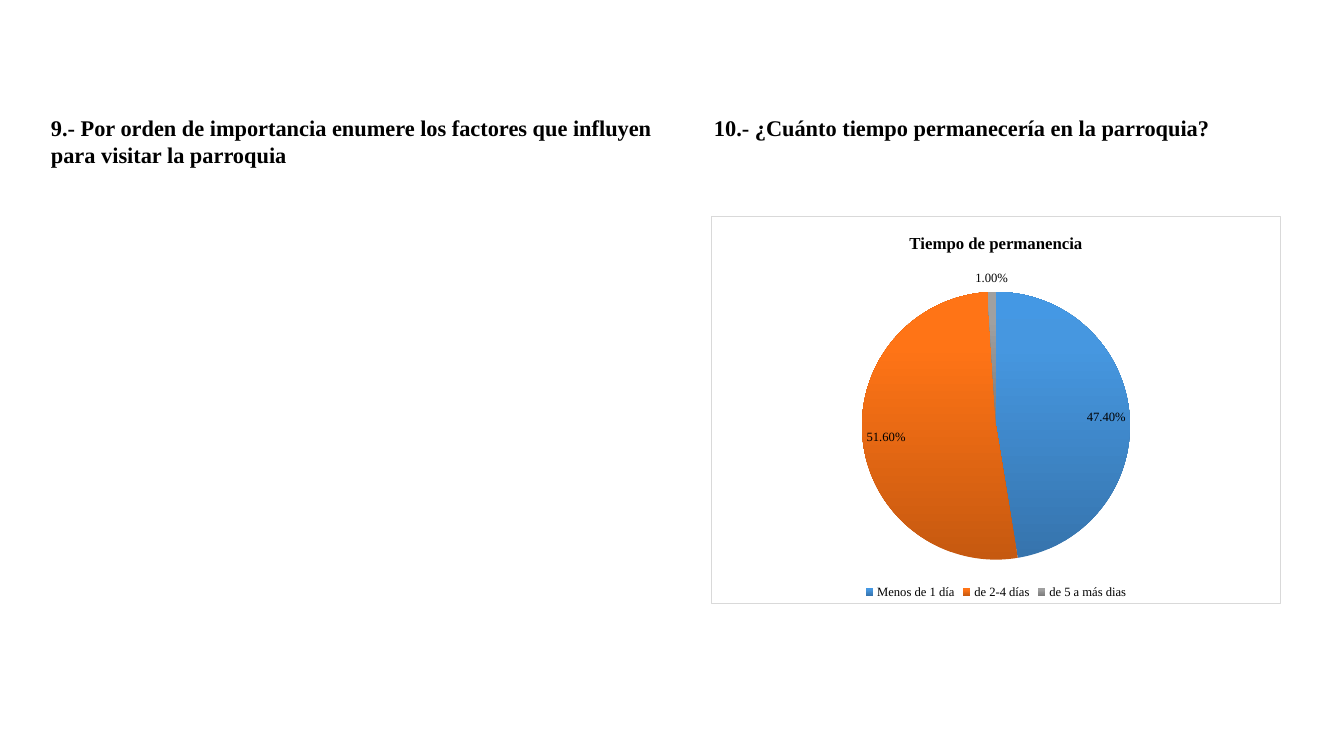
"""Build a slide with two survey questions and a pie chart of length of stay."""
from copy import deepcopy

from lxml.etree import fromstring
from pptx import Presentation
from pptx.chart.data import CategoryChartData
from pptx.dml.color import RGBColor
from pptx.enum.chart import XL_CHART_TYPE, XL_LABEL_POSITION, XL_LEGEND_POSITION
from pptx.oxml.ns import nsdecls, qn
from pptx.util import Pt

SCALE = 914400 / 100.8
SLIDE_SIZE = (1344, 756)
FONT = "Times New Roman"
BLACK = RGBColor(0x00, 0x00, 0x00)
WHITE = RGBColor(0xFF, 0xFF, 0xFF)
BORDER = RGBColor(0xD9, 0xD9, 0xD9)

QUESTIONS = [
    ("9.- Por orden de importancia enumere los factores que influyen para visitar la parroquia",
     (41, 109, 627, 65), True),
    ("10.- ¿Cuánto tiempo permanecería en la parroquia?", (704, 109, 528, 37), False),
]
CHART_TITLE = "Tiempo de permanencia"
CHART_BOX = (711, 216, 570, 388)
STAYS = [
    ("Menos de 1 día", 0.474, ("3674AD", "4697E0", "4498E4")),
    ("de 2-4 días", 0.516, ("C65910", "FF7416", "FF7517")),
    ("de 5 a más dias", 0.01, ("7B7B7B", "A0A0A0", "A1A1A1")),
]
STOP_POSITIONS = (0, 0.8, 1)


def px(*lengths):
    return [round(length * SCALE) for length in lengths]


def format_font(font, size, bold=False):
    font.name = FONT
    font.size = Pt(size)
    font.bold = bold
    font.color.rgb = BLACK


def write_text(frame, text, size=16, bold=True):
    para = frame.paragraphs[0]
    span = para.add_run()
    span.text = text
    format_font(span.font, size, bold)


def add_question(page, text, place, wrap):
    box = page.shapes.add_textbox(*px(*place))
    box.text_frame.word_wrap = wrap
    write_text(box.text_frame, text)


def add_stay_chart(page):
    data = CategoryChartData(number_format="0.00%")
    data.categories = [name for name, _, _ in STAYS]
    data.add_series("Series 1", [share for _, share, _ in STAYS])
    chart = page.shapes.add_chart(XL_CHART_TYPE.PIE, *px(*CHART_BOX), data).chart
    format_font(chart.font, 10)
    chart.has_title = True
    write_text(chart.chart_title.text_frame, CHART_TITLE, size=12)
    chart.chart_title.include_in_layout = False
    chart.has_legend = True
    chart.legend.position = XL_LEGEND_POSITION.BOTTOM
    chart.legend.include_in_layout = False
    format_font(chart.legend.font, 9)
    style_pie(chart)
    frame_chart(chart)


def style_pie(chart):
    plot = chart.plots[0]
    plot.vary_by_categories = True
    plot.has_data_labels = True
    labels = plot.data_labels
    labels.show_value = True
    labels.show_percentage = False
    labels.number_format = "0.00%"
    labels.number_format_is_linked = False
    labels.position = XL_LABEL_POSITION.BEST_FIT
    format_font(labels.font, 9)
    points = plot.series[0].points
    for index in range(len(STAYS)):
        points[index].format.fill.gradient()
        points[index].format.fill.gradient_angle = 90
        points[index].format.line.fill.background()
    for stops in chart.element.iter(qn("a:gsLst")):
        stops.append(deepcopy(stops[-1]))
    for index, (_, _, colors) in enumerate(STAYS):
        stops = points[index].format.fill.gradient_stops
        for stop, position, color in zip(stops, STOP_POSITIONS, colors):
            stop.position = position
            stop.color.rgb = RGBColor.from_string(color)


def frame_chart(chart):
    chart.element.find(qn("c:chart")).addnext(fromstring(
        f'<c:spPr {nsdecls("c", "a")}>'
        f'<a:solidFill><a:srgbClr val="{WHITE}"/></a:solidFill>'
        f'<a:ln w="{Pt(0.75)}"><a:solidFill><a:srgbClr val="{BORDER}"/></a:solidFill></a:ln>'
        '</c:spPr>'))


def main():
    deck = Presentation()
    deck.slide_width, deck.slide_height = px(*SLIDE_SIZE)
    page = deck.slides.add_slide(deck.slide_layouts[6])
    add_stay_chart(page)
    for text, place, wrap in QUESTIONS:
        add_question(page, text, place, wrap)
    deck.save("out.pptx")


if __name__ == "__main__":
    main()
